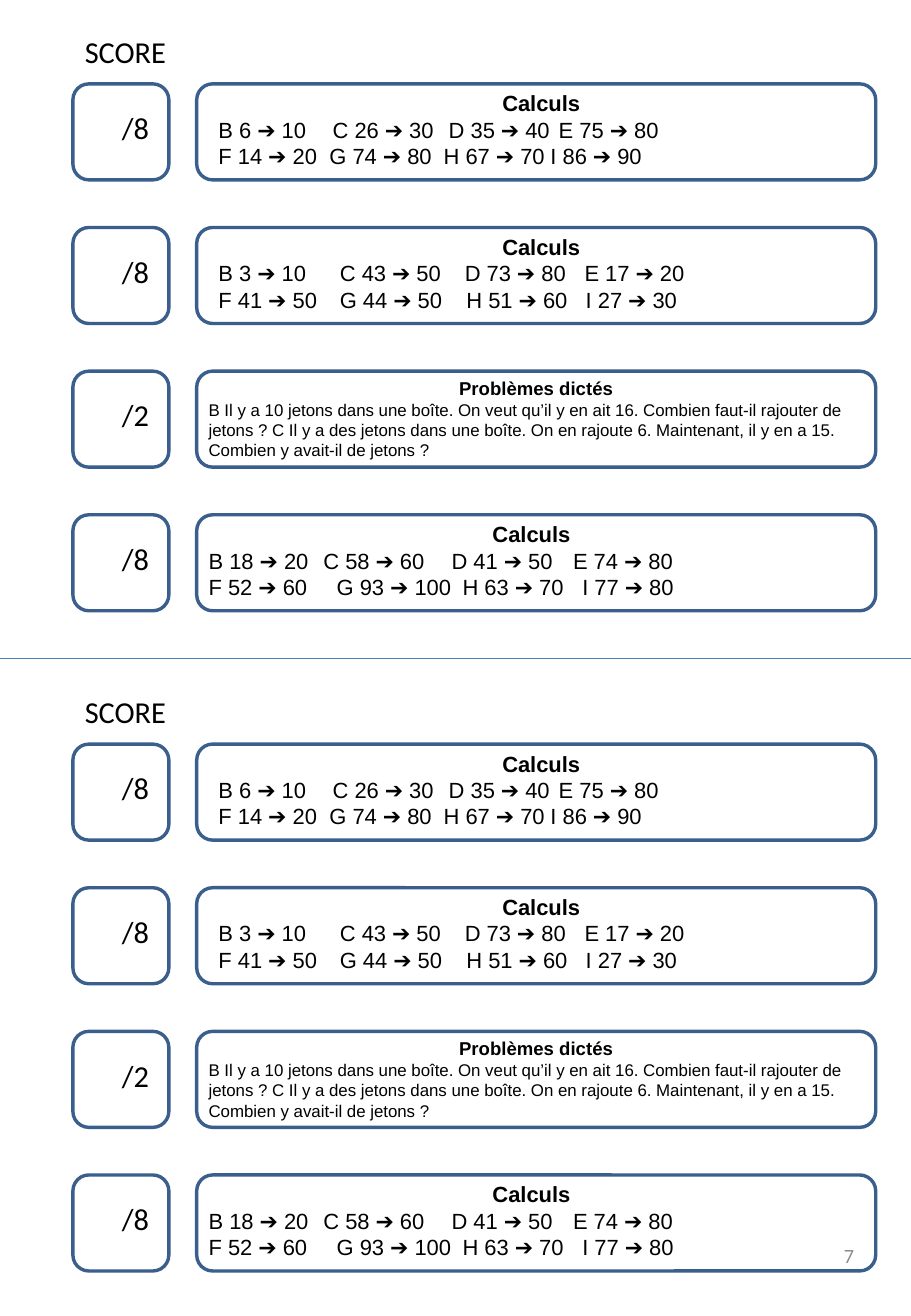
from dataclasses import dataclass

from lxml.etree import SubElement
from pptx import Presentation
from pptx.dml.color import RGBColor
from pptx.enum.shapes import MSO_CONNECTOR, MSO_SHAPE
from pptx.enum.text import MSO_ANCHOR, MSO_AUTO_SIZE, PP_ALIGN
from pptx.oxml.ns import qn
from pptx.util import Pt


@dataclass(frozen=True)
class Theme:
    ink: RGBColor = RGBColor(0x00, 0x00, 0x00)
    frame: RGBColor = RGBColor(0x3A, 0x5F, 0x8C)
    divider: RGBColor = RGBColor(0x4B, 0x7E, 0xBC)
    muted: RGBColor = RGBColor(0x8C, 0x8C, 0x8C)
    score_font: str = "Calibri"
    card_font: str = "Arial"
    score_size: int = 18
    sums_size: int = 13
    problem_title_size: int = 11
    problem_size: int = 10
    number_size: int = 12


theme = Theme()

PAGE_WIDTH, PAGE_HEIGHT = 540, 779.76
HALF_STEP, ROW_STEP = 391.2, 85.1
FIRST_ROW, CARD_HEIGHT = 49.7, 56.9
SCORE_LEFT, SCORE_WIDTH = 43.2, 56.9
CARD_LEFT, CARD_WIDTH = 116.6, 402.5
INDENTED_LEFT, SUMS_WIDTH = 122.4, 396.7

# Each card: score, title, left, width, title size, body size, lines with tab stops
cards = [
    ("/8", "Calculs", INDENTED_LEFT, SUMS_WIDTH, theme.sums_size, theme.sums_size, [
        ("B 6 ➔ 10\tC 26 ➔ 30\tD 35 ➔ 40\tE 75 ➔ 80", (67.7, 136.5, 201.7)),
        ("F 14 ➔ 20\tG 74 ➔ 80\tH 67 ➔ 70\tI 86 ➔ 90", (65.8, 133.5, 196.8)),
    ]),
    ("/8", "Calculs", INDENTED_LEFT, SUMS_WIDTH, theme.sums_size, theme.sums_size, [
        ("B 3 ➔ 10\tC 43 ➔ 50\tD 73 ➔ 80\tE 17 ➔ 20", (72, 146, 217)),
        ("F 41 ➔ 50\tG 44 ➔ 50\tH 51 ➔ 60\tI 27 ➔ 30", (72, 147, 217.7)),
    ]),
    ("/2", "Problèmes dictés", CARD_LEFT, CARD_WIDTH,
     theme.problem_title_size, theme.problem_size, [
        ("B Il y a 10 jetons dans une boîte. On veut qu’il y en ait 16. "
         "Combien faut-il rajouter de jetons ? C Il y a des jetons dans une boîte. "
         "On en rajoute 6. Maintenant, il y en a 15. Combien y avait-il de jetons ?", ()),
    ]),
    ("/8", "Calculs", CARD_LEFT, SUMS_WIDTH, theme.sums_size, theme.sums_size, [
        ("B 18 ➔ 20\tC 58 ➔ 60\tD 41 ➔ 50\tE 74 ➔ 80", (68, 144, 216)),
        ("F 52 ➔ 60\tG 93 ➔ 100\tH 63 ➔ 70\tI 77 ➔ 80", (75.9, 150.5, 221.5)),
    ]),
]

deck = Presentation()
deck.slide_width, deck.slide_height = Pt(PAGE_WIDTH), Pt(PAGE_HEIGHT)
page = deck.slides.add_slide(deck.slide_layouts[6])


def add_frame(left, top, width):
    frame = page.shapes.add_shape(MSO_SHAPE.FLOWCHART_ALTERNATE_PROCESS,
                                  Pt(left), Pt(top), Pt(width), Pt(CARD_HEIGHT))
    frame.shadow.inherit = False
    frame.fill.background()
    frame.line.color.rgb = theme.frame
    frame.line.width = Pt(2)


def add_text(left, top, width, height, lines, font, color=theme.ink):
    """Each line is (text, size, bold, alignment, tab stops)."""
    box = page.shapes.add_textbox(Pt(left), Pt(top), Pt(width), Pt(height))
    frame = box.text_frame
    frame.word_wrap = True
    frame.auto_size = MSO_AUTO_SIZE.SHAPE_TO_FIT_TEXT
    for index, (text, size, bold, alignment, stops) in enumerate(lines):
        para = frame.add_paragraph() if index else frame.paragraphs[0]
        para.alignment = alignment
        if stops:
            tab_list = SubElement(para._p.get_or_add_pPr(), qn("a:tabLst"))
            for stop in stops:
                SubElement(tab_list, qn("a:tab"), pos=str(int(Pt(stop))), algn="l")
        span = para.add_run()
        span.text = text
        span.font.name = font
        span.font.size = Pt(size)
        span.font.bold = bold
        span.font.color.rgb = color
    return frame


divider = page.shapes.add_connector(MSO_CONNECTOR.STRAIGHT,
                                    Pt(0), Pt(390), Pt(PAGE_WIDTH), Pt(390))
divider.line.color.rgb = theme.divider
divider.line.width = Pt(0.75)
SubElement(divider._element.spPr, qn("a:effectLst"))

for half in range(2):
    half_top = half * HALF_STEP
    add_text(SCORE_LEFT, half_top + 15.8, 96.5, 29,
             [("SCORE", theme.score_size, False, PP_ALIGN.LEFT, ())], theme.score_font)
    for row, (score, title, left, width, title_size, body_size, body) in enumerate(cards):
        top = half_top + FIRST_ROW + row * ROW_STEP
        add_frame(SCORE_LEFT, top, SCORE_WIDTH)
        add_frame(CARD_LEFT, top, CARD_WIDTH)
        score_text = add_text(
            49, top + 11.5, SCORE_WIDTH, 29,
            [(score, theme.score_size, False, PP_ALIGN.LEFT, ())], theme.score_font)
        score_text.margin_left = Pt(23.2)
        lines = [(title, title_size, True, PP_ALIGN.CENTER, ())]
        lines += [(text, body_size, False, PP_ALIGN.LEFT, stops) for text, stops in body]
        add_text(left, top, width, 55, lines, theme.card_font)

page_number = add_text(387.4, 722.9, 126, 41.8,
                       [("7", theme.number_size, False, PP_ALIGN.RIGHT, ())],
                       theme.score_font, theme.muted)
page_number.auto_size = MSO_AUTO_SIZE.NONE
page_number.vertical_anchor = MSO_ANCHOR.MIDDLE

deck.save("out.pptx")
